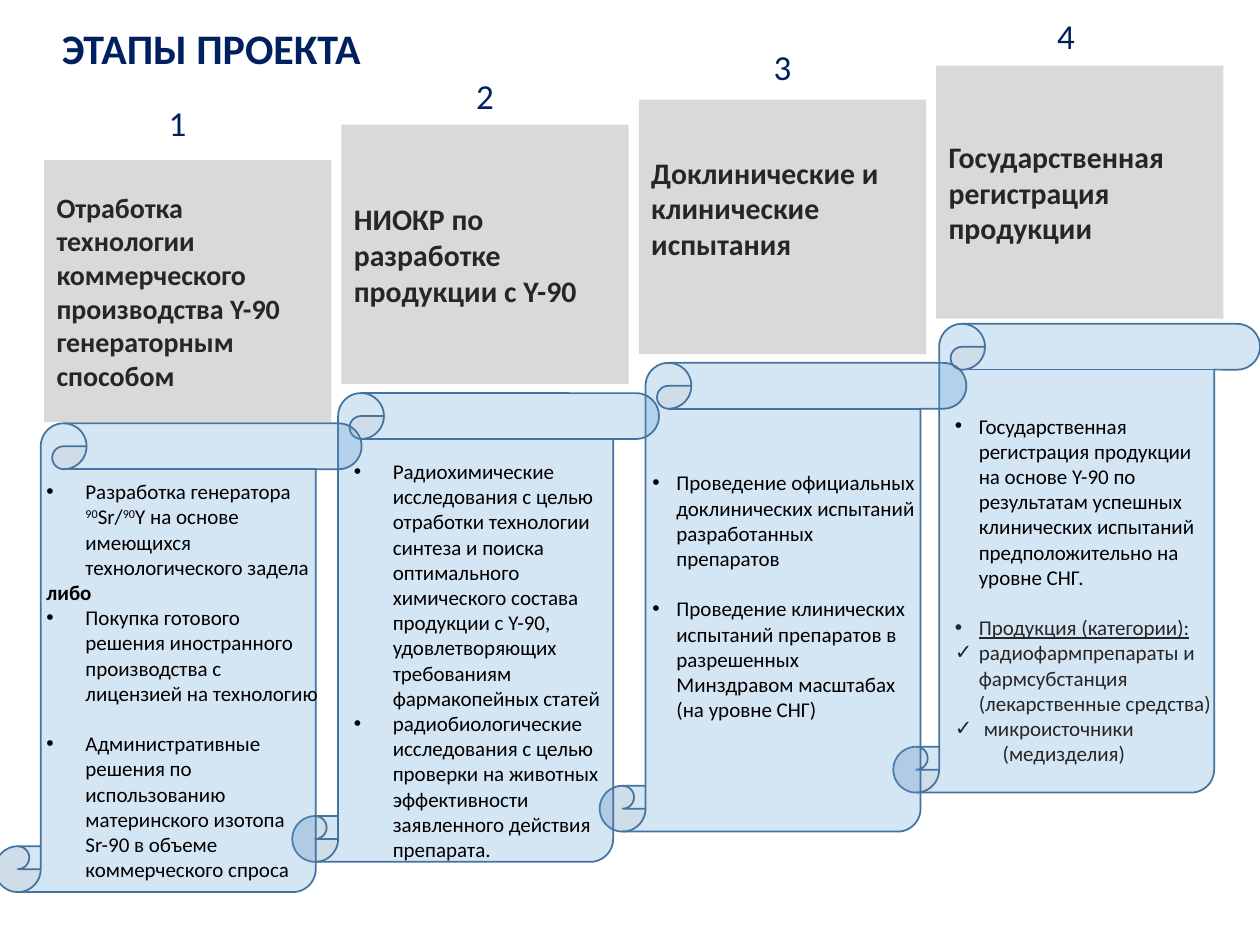
from dataclasses import dataclass

from lxml import etree
from pptx import Presentation
from pptx.dml.color import RGBColor
from pptx.enum import shapes, text
from pptx.oxml import ns
from pptx.util import Inches, Pt

NAVY = RGBColor(0x00, 0x20, 0x60)
GREY = RGBColor(0xD9, 0xD9, 0xD9)
DARK = RGBColor(0x26, 0x26, 0x26)
BLACK = RGBColor(0x00, 0x00, 0x00)
BLUE = RGBColor(0x5B, 0x9B, 0xD5)
EDGE = RGBColor(0x43, 0x73, 0x9E)
FONT = "Calibri"
CARD_LEFT, CARD_STEP, CARD_WIDTH = 0.35, 2.36, 2.28
BLANK_LINE = 14.4


@dataclass
class Item:
    spans: list
    bullet: str = "•"
    indent: float = 0.19
    hanging: bool = True
    before: float = 0
    color: RGBColor = BLACK
    bold: bool = False
    underline: bool = False


@dataclass
class Stage:
    heading: str
    size: int
    card: tuple
    number: tuple
    scroll: tuple
    body: tuple
    items: list
    bottom_inset: float = 0.05


STAGES = [
    Stage(
        "Отработка технологии коммерческого производства Y-90 генераторным способом",
        16, (1.27, 2.08), (0.78, 0.67, 1.26, 0.6), (-0.04, 3.36),
        (0.27, 3.75, 2.36, 3.55),
        [
            Item(["Разработка генератора ", "^90", "Sr/", "^90",
                  "Y на основе имеющихся технологического задела"], indent=0.31),
            Item(["либо"], bullet="", indent=0, bold=True),
            Item(["Покупка готового решения иностранного производства "
                  "с лицензией на технологию"], indent=0.31),
            Item(["Административные решения по использованию материнского изотопа "
                  "Sr-90 в объеме коммерческого спроса"], indent=0.31, before=BLANK_LINE),
        ],
    ),
    Stage(
        "НИОКР по разработке продукции с Y-90",
        17, (0.99, 2.06), (3.22, 0.36, 1.26, 0.79), (2.32, 3.12),
        (2.71, 3.59, 2.2, 3.53),
        [
            Item(["Радиохимические исследования с целью отработки технологии синтеза "
                  "и поиска оптимального химического состава продукции с Y-90, "
                  "удовлетворяющих требованиям фармакопейных статей"], indent=0.31),
            Item(["радиобиологические исследования с целью проверки на животных "
                  "эффективности заявленного действия препарата."], indent=0.31),
        ],
    ),
    Stage(
        "Доклинические и клинические испытания",
        17, (0.79, 2.02), (5.58, 0.13, 1.26, 0.79), (4.76, 2.88),
        (5.08, 3.68, 2.35, 2.12),
        [
            Item(["Проведение официальных доклинических испытаний "
                  "разработанных\vпрепаратов"]),
            Item(["Проведение клинических испытаний препаратов в "
                  "разрешенных\vМинздравом масштабах (на уровне СНГ)"], before=BLANK_LINE),
        ],
        bottom_inset=0.35,
    ),
    Stage(
        "Государственная регистрация продукции",
        17, (0.52, 2.01), (7.83, -0.11, 1.26, 0.79), (7.09, 2.57),
        (7.48, 3.23, 2.24, 2.93),
        [
            Item(["Государственная регистрация продукции на основе Y-90 по результатам "
                  "успешных клинических испытаний предположительно на уровне СНГ."]),
            Item(["Продукция (категории):"], before=BLANK_LINE, color=DARK, underline=True),
            Item(["радиофармпрепараты и фармсубстанция (лекарственные средства)"],
                 bullet="✓", color=DARK),
            Item(["микроисточники"], bullet="✓", indent=0.23, color=DARK),
            Item(["(медизделия)"], bullet="", indent=0.38, hanging=False, color=DARK),
        ],
    ),
]


def inches(values):
    return [Inches(value) for value in values]


def style(font, size, color, bold=False):
    font.name, font.size, font.bold = FONT, Pt(size), bold
    font.color.rgb = color


def add_title(page):
    title = page.shapes.title
    title.left, title.top, title.width, title.height = inches((0.39, 0.13, 2.7, 0.5))
    frame = title.text_frame
    frame.text = "ЭТАПЫ ПРОЕКТА"
    frame.word_wrap = True
    frame.auto_size = text.MSO_AUTO_SIZE.NONE
    frame.vertical_anchor = text.MSO_ANCHOR.TOP
    para = frame.paragraphs[0]
    para.alignment = text.PP_ALIGN.LEFT
    style(para.font, 24, NAVY, True)


def add_scroll(page, left, top):
    scroll = page.shapes.add_shape(
        shapes.MSO_SHAPE.VERTICAL_SCROLL, *inches((left, top, 2.91, 3.72)))
    scroll.shadow.inherit = False
    scroll.fill.solid()
    scroll.fill.fore_color.rgb = BLUE
    color = scroll.fill._xPr.find(".//" + ns.qn("a:srgbClr"))
    etree.SubElement(color, ns.qn("a:alpha"), val="26000")
    scroll.line.color.rgb = EDGE
    scroll.line.width = Pt(1)


def add_card(page, index, stage):
    top, height = stage.card
    card = page.shapes.add_shape(
        shapes.MSO_SHAPE.RECTANGLE,
        *inches((CARD_LEFT + index * CARD_STEP, top, CARD_WIDTH, height)))
    card.shadow.inherit = False
    card.fill.solid()
    card.fill.fore_color.rgb = GREY
    card.line.fill.background()
    frame = card.text_frame
    frame.text = stage.heading
    frame.margin_bottom = Inches(stage.bottom_inset)
    frame.vertical_anchor = text.MSO_ANCHOR.MIDDLE
    para = frame.paragraphs[0]
    para.alignment = text.PP_ALIGN.LEFT
    style(para.font, stage.size, DARK, True)


def add_number(page, number, place):
    box = page.shapes.add_textbox(*inches(place))
    frame = box.text_frame
    frame.text = str(number)
    frame.word_wrap = True
    frame.vertical_anchor = text.MSO_ANCHOR.MIDDLE
    para = frame.paragraphs[0]
    para.alignment = text.PP_ALIGN.CENTER
    style(para.font, 20, NAVY)


def fill_item(para, item):
    for content in item.spans:
        if content.startswith("^"):
            span = para.add_run()
            span.text = content[1:]
            span.font._element.set("baseline", "30000")
        else:
            for number, part in enumerate(content.split("\v")):
                if number:
                    para.add_line_break()
                para.add_run().text = part
    properties = para._p.get_or_add_pPr()
    properties.set("marL", str(Inches(item.indent)))
    properties.set("indent", str(-Inches(item.indent) if item.hanging else 0))
    para.space_before = Pt(item.before)
    if item.bullet:
        etree.SubElement(properties, ns.qn("a:buFont"), typeface="Arial")
        etree.SubElement(properties, ns.qn("a:buChar"), char=item.bullet)
    else:
        etree.SubElement(properties, ns.qn("a:buNone"))
    style(para.font, 12, item.color, item.bold)
    para.font.underline = item.underline


def add_body(page, stage):
    box = page.shapes.add_textbox(*inches(stage.body))
    frame = box.text_frame
    frame.word_wrap = True
    for index, item in enumerate(stage.items):
        para = frame.add_paragraph() if index else frame.paragraphs[0]
        fill_item(para, item)


def main():
    deck = Presentation()
    deck.slide_width, deck.slide_height = Inches(10), Inches(7.5)
    page = deck.slides.add_slide(deck.slide_layouts[5])
    add_title(page)
    for stage in reversed(STAGES):
        add_scroll(page, *stage.scroll)
    for index, stage in enumerate(STAGES):
        add_card(page, index, stage)
        add_number(page, index + 1, stage.number)
        add_body(page, stage)
    deck.save("out.pptx")


if __name__ == "__main__":
    main()
